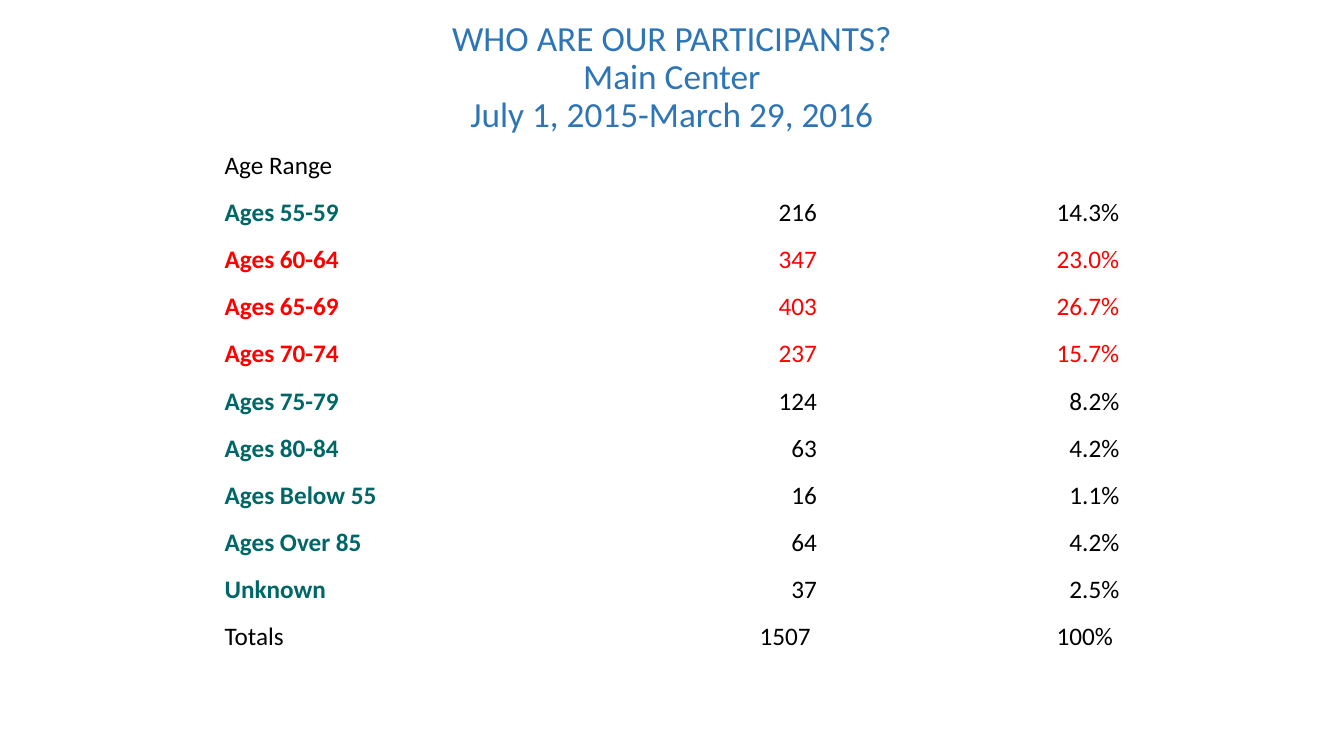
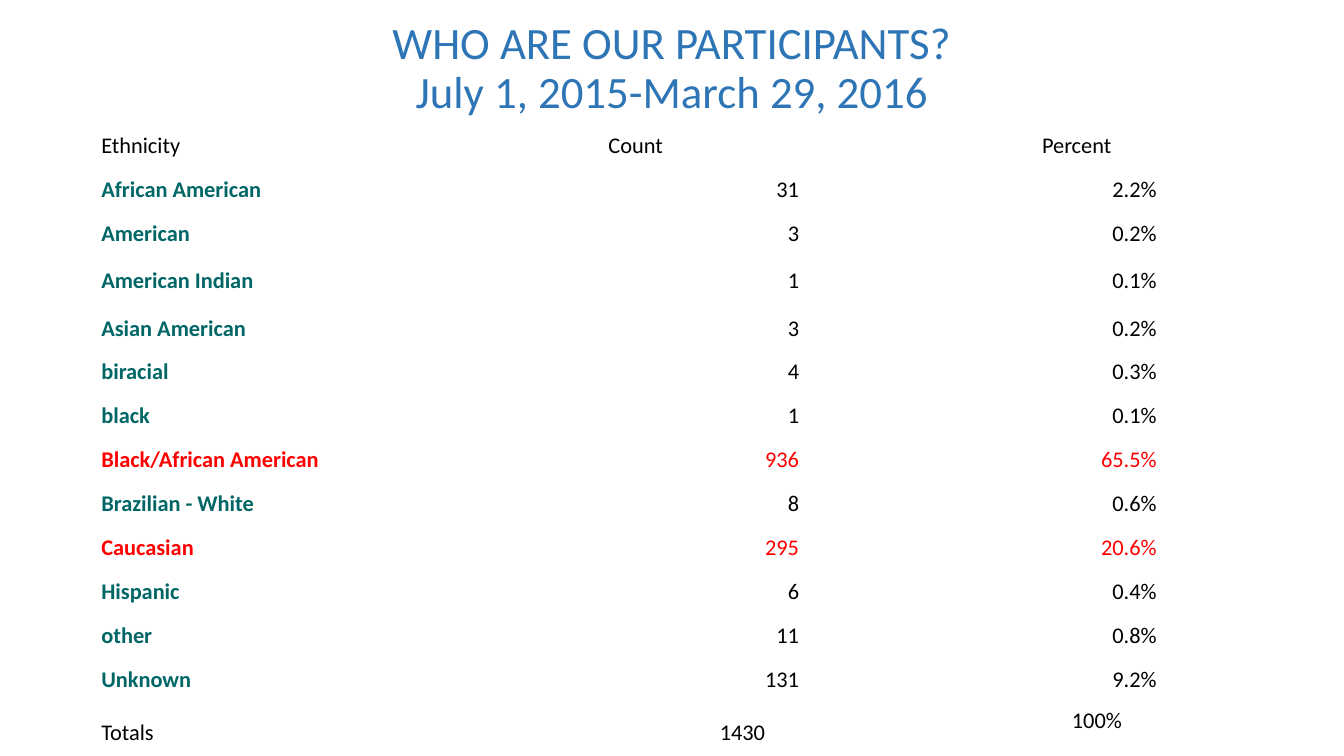
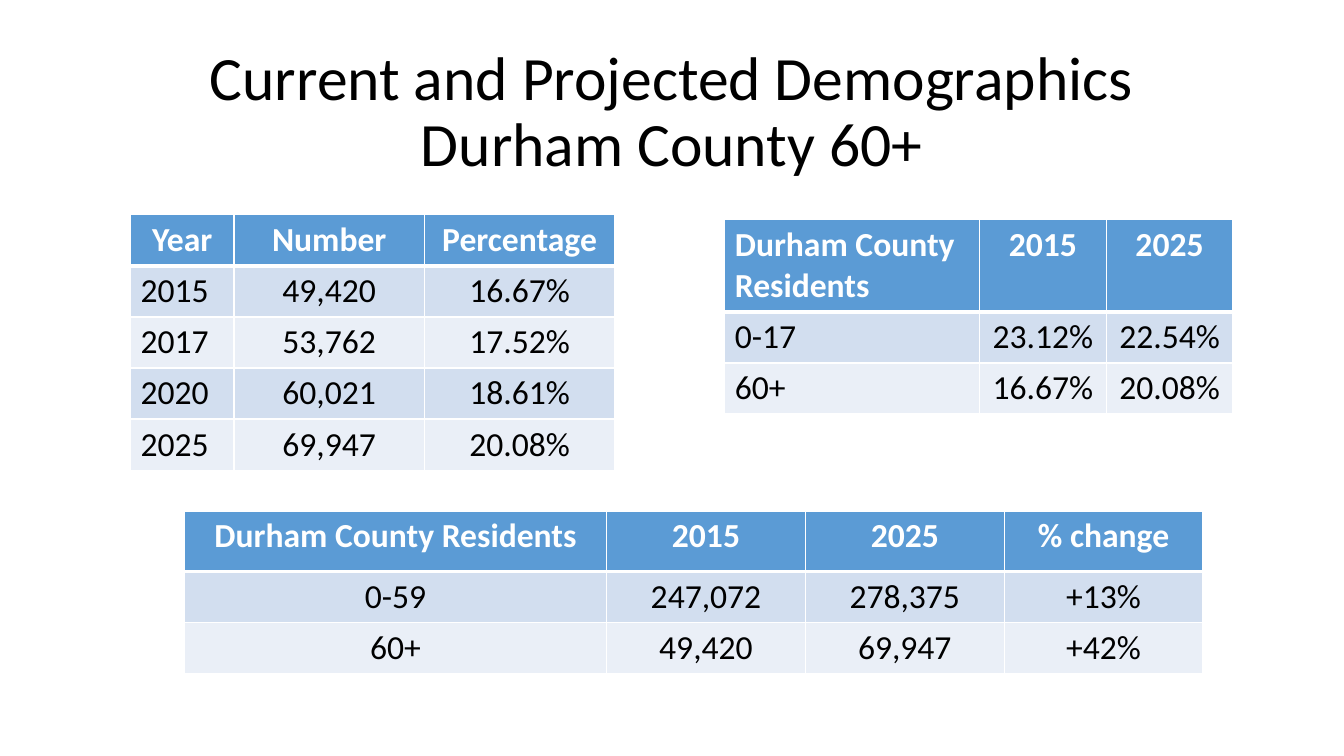
from dataclasses import dataclass

from lxml.etree import SubElement
from pptx import Presentation
from pptx.dml.color import RGBColor
from pptx.enum.text import MSO_ANCHOR, PP_ALIGN
from pptx.oxml.ns import qn
from pptx.util import Pt


@dataclass(frozen=True)
class Theme:
    font: str = "Calibri"
    black: str = "000000"
    white: str = "FFFFFF"
    blue: str = "2E75B6"
    teal: str = "006666"
    red: str = "FF0000"
    head: str = "5B9BD5"
    bands: tuple = ("D2DEEF", "EAEFF7")
    grid: float = 24
    thin: float = 1
    thick: float = 3


THEME = Theme()
LEFT, MID, RIGHT = PP_ALIGN.LEFT, PP_ALIGN.CENTER, PP_ALIGN.RIGHT
HIGH = 15  # percent from which a row is red

# Header and total cells: text, or text with its own right inset
AGES = dict(
    title="WHO ARE OUR PARTICIPANTS?\nMain Center\nJuly 1, 2015-March 29, 2016",
    box=(66, 10.8, 828, 90), title_size=25.2,
    at=(156, 101.5), width=216, height=33.7, tall={}, size=18, pad=(4.5, 4.5),
    header=("Age Range", "", ""),
    rows=[
        ("Ages 55-59", "216", "14.3%"),
        ("Ages 60-64", "347", "23.0%"),
        ("Ages 65-69", "403", "26.7%"),
        ("Ages 70-74", "237", "15.7%"),
        ("Ages 75-79", "124", "8.2%"),
        ("Ages 80-84", "63", "4.2%"),
        ("Ages Below 55", "16", "1.1%"),
        ("Ages Over 85", "64", "4.2%"),
        ("Unknown", "37", "2.5%"),
    ],
    total=("Totals", ("1507", 9), ("100%", 9)), raised=False,
)
ETHNIC = dict(
    title="WHO ARE OUR PARTICIPANTS?\nJuly 1, 2015-March 29, 2016",
    box=(66, 0, 828, 99.4), title_size=32,
    at=(66.2, 88.6), width=255.4, height=31.43, tall={3: 36, 13: 44},
    size=16, pad=(6.2, 3.6),
    header=("Ethnicity", ("Count", 103.5), ("Percent", 38.5)),
    rows=[
        ("African American", "31", "2.2%"),
        ("American", "3", "0.2%"),
        ("American Indian", "1", "0.1%"),
        ("Asian American", "3", "0.2%"),
        ("biracial", "4", "0.3%"),
        ("black", "1", "0.1%"),
        ("Black/African American", "936", "65.5%"),
        ("Brazilian - White", "8", "0.6%"),
        ("Caucasian", "295", "20.6%"),
        ("Hispanic", "6", "0.4%"),
        ("other", "11", "0.8%"),
        ("Unknown", "131", "9.2%"),
    ],
    total=("Totals", ("1430", 30.5), ("100%", 31)), raised=True,
)
COUNTY = dict(
    title="Current and Projected Demographics\nDurham County 60+",
    box=(66, 28.8, 828, 104.4), title_size=44,
)
# "left" gives the left-aligned cells of column one: none, body or all
GRIDS = [
    dict(at=(131.8, 365), widths=(301.5, 142, 142, 142), top=43.2, left="none",
         rows=[("Durham County Residents", "2015", "2025", "% change"),
               ("0-59", "247,072", "278,375", "+13%"),
               ("60+", "49,420", "69,947", "+42%")]),
    dict(at=(93.2, 153.4), widths=(74, 136, 136), top=36.5, left="body",
         rows=[("Year", "Number", "Percentage"),
               ("2015", "49,420", "16.67%"),
               ("2017", "53,762", "17.52%"),
               ("2020", "60,021", "18.61%"),
               ("2025", "69,947", "20.08%")]),
    dict(at=(517.7, 157), widths=(182, 90.5, 90.5), top=65.8, left="all",
         rows=[("Durham County Residents", "2015", "2025"),
               ("0-17", "23.12%", "22.54%"),
               ("60+", "16.67%", "20.08%")]),
]
LINE = 36.5


def write(frame, text, *, size, color=THEME.black, bold=False, align=LEFT, lead=None):
    para = frame.paragraphs[0]
    para.text = text
    para.alignment = align
    if lead:
        para.line_spacing = lead
    for run in para.runs:
        font = run.font
        font.name, font.size, font.bold = THEME.font, Pt(size), bold
        font.color.rgb = RGBColor.from_string(color)


def add_title(slide, data, color):
    frame = slide.shapes.add_textbox(*map(Pt, data["box"])).text_frame
    frame.word_wrap = True
    frame.vertical_anchor = MSO_ANCHOR.MIDDLE
    write(frame, data["title"], size=data["title_size"], color=color,
          align=MID, lead=0.9)


def add_table(slide, at, widths, heights):
    """Add a table without style bands, sized by its columns and rows."""
    shape = slide.shapes.add_table(
        len(heights), len(widths), *map(Pt, (*at, sum(widths), sum(heights))))
    table = shape.table
    table.first_row = table.horz_banding = False
    for col, width in zip(table.columns, widths):
        col.width = Pt(width)
    for row, height in zip(table.rows, heights):
        row.height = Pt(height)
    return table


def add_edges(cell, **widths):
    """Draw white cell borders; keys L, R, T, B in that order."""
    props = cell._tc.get_or_add_tcPr()
    for side, width in widths.items():
        line = SubElement(props, qn("a:ln" + side), w=str(Pt(width)))
        fill = SubElement(line, qn("a:solidFill"))
        SubElement(fill, qn("a:srgbClr"), val=THEME.white)


def add_list(slide, data):
    """Add a plain table of name, count and share."""
    rows = [data["header"], *data["rows"], data["total"]]
    last = len(rows) - 1
    heights = [data["tall"].get(r, data["height"]) for r in range(len(rows))]
    table = add_table(slide, data["at"], [data["width"]] * 3, heights)
    side, edge = data["pad"]
    for r, row in enumerate(rows):
        body = 0 < r < last
        high = body and float(row[2].rstrip("%")) >= HIGH
        for c, item in enumerate(row):
            text, inset = (item, side) if isinstance(item, str) else item
            cell = table.cell(r, c)
            cell.fill.background()
            cell.margin_left, cell.margin_right = Pt(side), Pt(inset)
            cell.margin_top = cell.margin_bottom = Pt(edge)
            lift = data["raised"] and (r, c) == (last, 2)
            cell.vertical_anchor = MSO_ANCHOR.TOP if lift else MSO_ANCHOR.MIDDLE
            name = body and c == 0
            color = THEME.red if high else THEME.teal if name else THEME.black
            write(cell.text_frame, text, size=data["size"], color=color,
                  bold=name, align=RIGHT if c else LEFT)


def add_grid(slide, data):
    """Add a banded table with a blue header row."""
    rows = data["rows"]
    heights = [data["top"]] + [LINE] * (len(rows) - 1)
    table = add_table(slide, data["at"], data["widths"], heights)
    thin, thick = THEME.thin, THEME.thick
    for r, row in enumerate(rows):
        head = r == 0
        fill = THEME.head if head else THEME.bands[(r - 1) % 2]
        for c, text in enumerate(row):
            cell = table.cell(r, c)
            add_edges(cell, L=thin, R=thin, T=thick if r == 1 else thin,
                      B=thick if head else thin)
            cell.fill.solid()
            cell.fill.fore_color.rgb = RGBColor.from_string(fill)
            flush = c == 0 and (data["left"] == "all"
                                or data["left"] == "body" and not head)
            write(cell.text_frame, text, size=THEME.grid, bold=head,
                  color=THEME.white if head else THEME.black,
                  align=LEFT if flush else MID)


def main():
    deck = Presentation()
    deck.slide_width, deck.slide_height = Pt(960), Pt(540)
    blank = deck.slide_layouts[6]
    for data in (AGES, ETHNIC):
        slide = deck.slides.add_slide(blank)
        add_title(slide, data, THEME.blue)
        add_list(slide, data)
    slide = deck.slides.add_slide(blank)
    add_title(slide, COUNTY, THEME.black)
    for grid in GRIDS:
        add_grid(slide, grid)
    deck.save("out.pptx")


if __name__ == "__main__":
    main()
